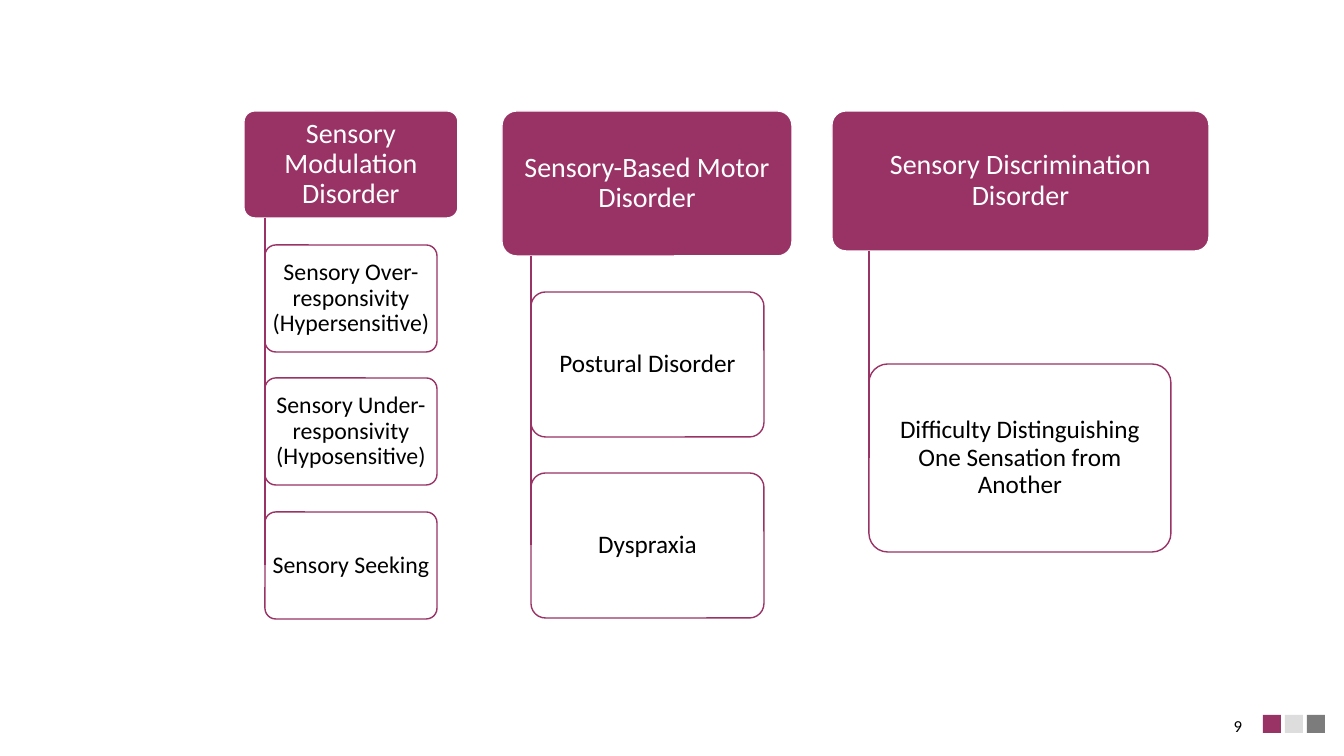
from lxml.etree import SubElement
from pptx import Presentation
from pptx.dml.color import RGBColor
from pptx.enum.shapes import MSO_CONNECTOR, MSO_SHAPE
from pptx.enum.text import MSO_ANCHOR, PP_ALIGN
from pptx.oxml.ns import qn
from pptx.util import Pt

SCALE = 914400 / 100.8
PLUM, WHITE, BLACK = "993366", "FFFFFF", "000000"


def px(n):
    return round(n * SCALE)


def tint(code):
    return RGBColor.from_string(code)


class Deck:
    font = "Calibri"

    def __init__(self):
        self.prs = Presentation()
        self.prs.slide_width, self.prs.slide_height = px(1344), px(756)
        self.slide = self.prs.slides.add_slide(self.prs.slide_layouts[6])

    def label(self, frame, lines, size, color, align, anchor):
        frame.word_wrap = True
        frame.vertical_anchor = anchor
        for i, line in enumerate(lines):
            para = frame.paragraphs[0] if i == 0 else frame.add_paragraph()
            para.alignment = align
            para.line_spacing = 0.9
            run = para.add_run()
            run.text = line
            run.font.name, run.font.size = self.font, Pt(size)
            run.font.color.rgb = tint(color)

    def block(self, kind, x, y, w, h, fill, edge=None):
        box = self.slide.shapes.add_shape(kind, px(x), px(y), px(w), px(h))
        box.shadow.inherit = False
        box.fill.solid()
        box.fill.fore_color.rgb = tint(fill)
        if edge:
            box.line.color.rgb = tint(edge)
            box.line.width = Pt(1)
        else:
            box.line.fill.background()
        return box

    def card(self, x, y, w, h, lines, size, fill, edge, color):
        box = self.block(MSO_SHAPE.ROUNDED_RECTANGLE, x, y, w, h, fill, edge)
        box.adjustments[0] = 0.1
        frame = box.text_frame
        frame.margin_left = frame.margin_right = px(4)
        frame.margin_top = frame.margin_bottom = px(3)
        self.label(frame, lines, size, color, PP_ALIGN.CENTER, MSO_ANCHOR.MIDDLE)
        return box

    def stem(self, x, y, box):
        line = self.slide.shapes.add_connector(
            MSO_CONNECTOR.STRAIGHT, px(x), px(y), px(x), box.top + box.height // 2)
        line.end_connect(box, 1)
        line.line.color.rgb = tint(PLUM)
        line.line.width = Pt(1)
        SubElement(line._element.spPr, qn("a:effectLst"))

    def note(self, x, y, w, h, text, size):
        box = self.slide.shapes.add_textbox(px(x), px(y), px(w), px(h))
        self.label(box.text_frame, [text], size, BLACK, PP_ALIGN.RIGHT, MSO_ANCHOR.BOTTOM)


# Each group: head box, head lines, first child box, child size, child texts
GROUPS = [
    ((244, 111, 214, 107), ["Sensory Modulation Disorder"], (265, 245, 172, 107), 17,
     ["Sensory Over-responsivity (Hypersensitive)",
      "Sensory Under-responsivity (Hyposensitive)", "Sensory Seeking"]),
    ((502, 111, 290, 145), ["Sensory-Based Motor Disorder"], (531, 292, 233, 145), 18,
     ["Postural Disorder", "Dyspraxia"]),
    ((832, 111, 377, 140), ["Sensory Discrimination", "Disorder"], (869, 364, 302, 188), 18,
     ["Difficulty Distinguishing One Sensation from Another"]),
]


def main():
    deck = Deck()

    # Footer squares and page number
    for i, color in enumerate([PLUM, "DDDDDD", "7C7C7C"]):
        deck.block(MSO_SHAPE.RECTANGLE, 1263 + 22 * i, 715, 18, 18, color)
    deck.note(950, 701, 302, 40, "9", 12)

    # Disorder groups: children spaced a quarter of their height apart
    for head, title, first, size, kids in GROUPS:
        deck.card(*head, title, 20, PLUM, WHITE, WHITE)
        x, y, w, h = first
        for i, text in enumerate(kids):
            kid = deck.card(x, y + i * h * 5 // 4, w, h, [text], size, WHITE, PLUM, BLACK)
            deck.stem(x, head[1] + head[3], kid)

    deck.prs.save("out.pptx")


if __name__ == "__main__":
    main()
